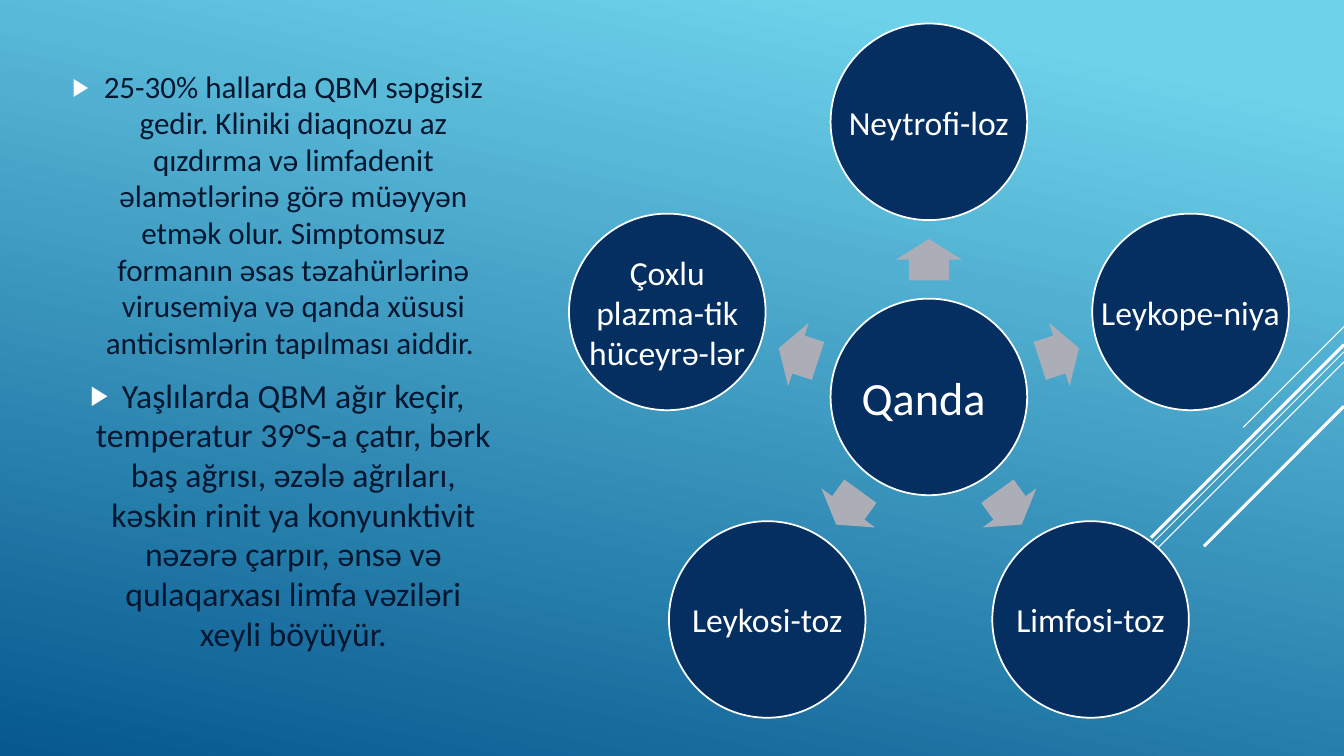
"""Build the slide on blood findings: two bulleted notes beside a radial diagram."""
from math import cos, radians, sin

from lxml import etree
from pptx import Presentation
from pptx.dml.color import RGBColor
from pptx.enum import shapes, text
from pptx.oxml import ns
from pptx.util import Pt


def rgb(code):
    return RGBColor.from_string(code)


def add_round(kind, x, y, width, height, fill):
    shape = slide.shapes.add_shape(
        kind, Pt(x - width / 2), Pt(y - height / 2), Pt(width), Pt(height))
    shape.shadow.inherit = False
    shape.fill.solid()
    shape.fill.fore_color.rgb = rgb(fill)
    return shape


deck = Presentation()
deck.slide_width, deck.slide_height = Pt(960), Pt(540)
slide = deck.slides.add_slide(deck.slide_layouts[1])
heading = slide.shapes.title.element
heading.getparent().remove(heading)

backdrop = slide.background.fill
backdrop.gradient()
backdrop.gradient_angle = 258
for stop, (position, code) in zip(
        backdrop.gradient_stops, [(0.1, "6ED2EB"), (1, "06588E")]):
    stop.position = position
    stop.color.rgb = rgb(code)

for start_y, length, weight in [(233.3, 72, 0.75), (251.3, 234.7, 0.75),
                                (258.5, 149.3, 0.75), (246.2, 137.8, 2.25),
                                (290.2, 100, 2.25)]:
    ray = slide.shapes.add_connector(
        shapes.MSO_CONNECTOR.STRAIGHT, Pt(960), Pt(start_y),
        Pt(960 - length), Pt(start_y + length))
    ray.line.color.rgb = rgb("FFFFFF")
    ray.line.width = Pt(weight)
    etree.SubElement(ray.element.spPr, ns.qn("a:effectLst"))

notes = slide.placeholders[1]
notes.left, notes.top, notes.width, notes.height = Pt(35.3), Pt(34), Pt(326.2), Pt(448.6)
notes.text_frame.auto_size = text.MSO_AUTO_SIZE.NONE
notes.text_frame.word_wrap = True
notes.text_frame.vertical_anchor = text.MSO_ANCHOR.MIDDLE
findings = [
    ("25-30% hallarda QBM səpgisiz gedir. Kliniki diaqnozu az qızdırma və "
     "limfadenit əlamətlərinə görə müəyyən etmək olur. Simptomsuz formanın əsas "
     "təzahürlərinə virusemiya və qanda xüsusi anticismlərin tapılması aiddir. ", 22.2),
    ("Yaşlılarda QBM ağır keçir, temperatur 39°S-a çatır, bərk baş ağrısı, əzələ "
     "ağrıları, kəskin rinit ya konyunktivit nəzərə çarpır, ənsə və qulaqarxası "
     "limfa vəziləri xeyli böyüyür.", 24.1),
]
for index, (finding, size) in enumerate(findings):
    frame = notes.text_frame
    note = frame.add_paragraph() if index else frame.paragraphs[0]
    note.alignment = text.PP_ALIGN.CENTER
    note.line_spacing = 0.98
    note.space_before, note.space_after = Pt(4.6), Pt(6)
    wording = note.add_run()
    wording.text = finding
    wording.font.name, wording.font.size = "Calibri", Pt(size)
    wording.font.color.rgb = rgb("031730")
    settings = note._p.get_or_add_pPr()
    settings.set("marL", str(Pt(22.5)))
    settings.set("indent", str(-Pt(22.5)))
    colour = etree.SubElement(settings, ns.qn("a:buClr"))
    etree.SubElement(colour, ns.qn("a:srgbClr"), val="FFFFFF")
    etree.SubElement(settings, ns.qn("a:buSzPct"), val="80000")
    etree.SubElement(settings, ns.qn("a:buFont"), typeface="Calibri")
    etree.SubElement(settings, ns.qn("a:buChar"), char="▶")

hub_x, hub_y, diameter = 663.5, 283.5, 140.4
orbit, arrow_orbit = 196.5, 98
cells = [["Neytrofi-loz"], ["Leykope-niya"], ["Limfosi-toz"], ["Leykosi-toz"],
         ["Çoxlu ", "plazma-tik ", "hüceyrə-lər"]]
circles = [(["Qanda "], 33, hub_x, hub_y)]
for index, cell in enumerate(cells):
    degrees = -90 + index * 360 / len(cells)
    across, down = cos(radians(degrees)), sin(radians(degrees))
    circles.append((cell, 24, hub_x + orbit * across, hub_y + orbit * down))
    pointer = add_round(shapes.MSO_SHAPE.RIGHT_ARROW, hub_x + arrow_orbit * across,
                        hub_y + arrow_orbit * down, 29.5, 47.5, "ABADB7")
    pointer.line.fill.background()
    pointer.adjustments[0], pointer.adjustments[1] = 0.6, 0.5
    pointer.rotation = degrees % 360

for rows, size, x, y in circles:
    circle = add_round(shapes.MSO_SHAPE.OVAL, x, y, diameter, diameter, "052F61")
    circle.line.color.rgb = rgb("FFFFFF")
    circle.line.width = Pt(1.25)
    frame = circle.text_frame
    frame.word_wrap = False
    frame.vertical_anchor = text.MSO_ANCHOR.MIDDLE
    frame.margin_left = frame.margin_right = frame.margin_top = frame.margin_bottom = Pt(2)
    label = frame.paragraphs[0]
    label.alignment = text.PP_ALIGN.CENTER
    for index, row in enumerate(rows):
        if index:
            label.add_line_break()
        part = label.add_run()
        part.text = row.rstrip() if len(rows) > 1 else row
        part.font.name, part.font.size = "Calibri", Pt(size)
        part.font.color.rgb = rgb("FFFFFF")

deck.save("out.pptx")
